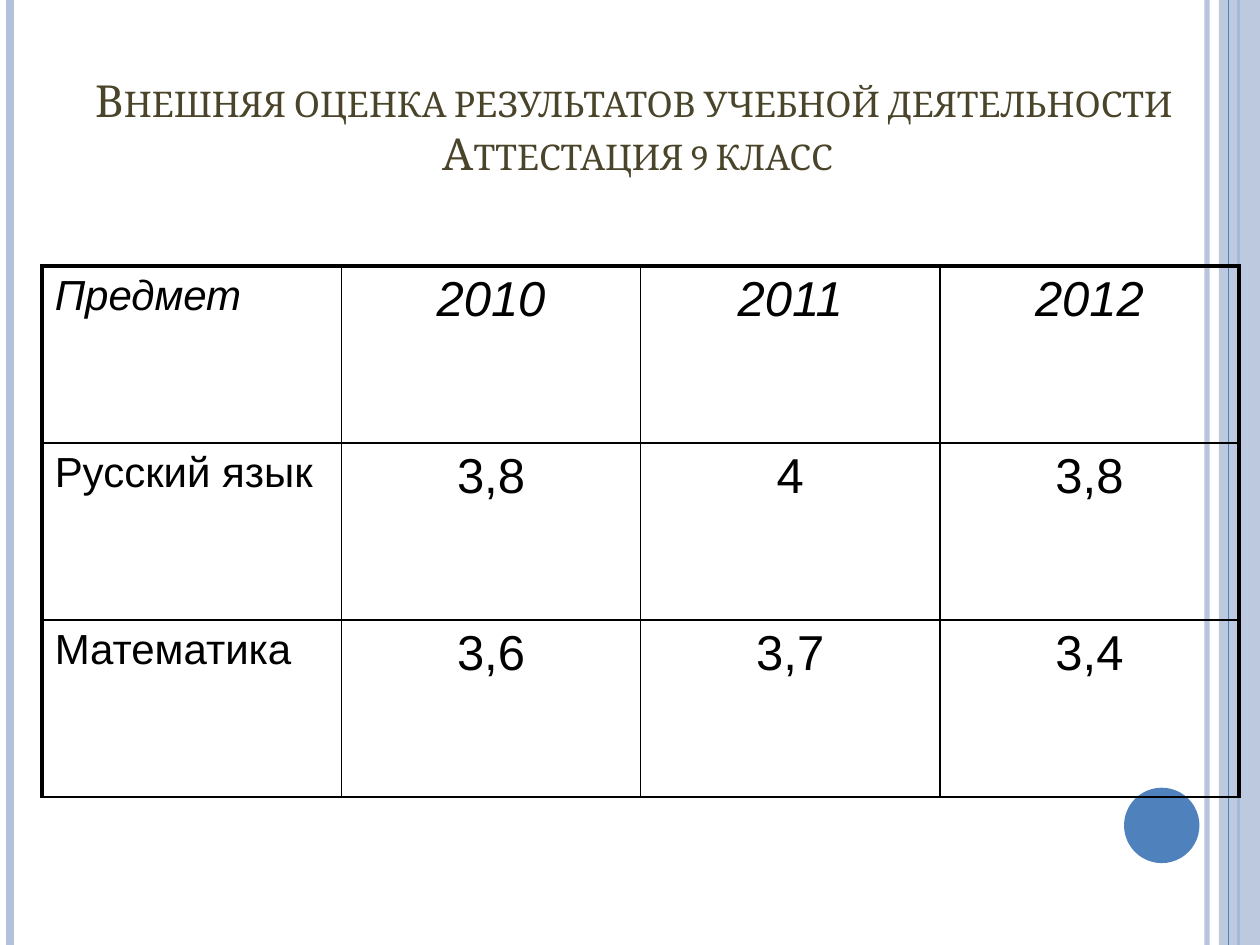
"""Builds a slide with a table of grade 9 external assessment results."""
from dataclasses import dataclass

from lxml.etree import SubElement
from pptx import Presentation
from pptx.dml.color import RGBColor
from pptx.enum.shapes import MSO_CONNECTOR as CONN, MSO_SHAPE as SHAPE
from pptx.enum.text import MSO_ANCHOR as ANCHOR, PP_ALIGN as ALIGN
from pptx.oxml.ns import qn
from pptx.util import Cm, Pt


@dataclass(frozen=True)
class Theme:
    pale: RGBColor = RGBColor(0xB3, 0xC1, 0xDB)
    accent: RGBColor = RGBColor(0x4F, 0x81, 0xBD)
    title: RGBColor = RGBColor(0x4A, 0x45, 0x2A)
    ink: RGBColor = RGBColor(0, 0, 0)
    title_font: str = "Cambria"
    body_font: str = "Arial"
    title_size: float = 25.2
    label_size: float = 24
    value_size: float = 28
    outer_border: float = 2.25
    inner_border: float = 1


def add_stripe(x, color, width, opacity=100):
    stripe = s.shapes.add_connector(CONN.STRAIGHT, Cm(x), 0, Cm(x), prs.slide_height)
    stripe.line.color.rgb = color
    stripe.line.width = Pt(width)
    sp_pr = stripe.element.spPr
    SubElement(sp_pr.find(".//" + qn("a:srgbClr")), qn("a:alpha"), val=str(opacity * 1000))
    SubElement(sp_pr, qn("a:effectLst"))


def add_plain_shape(kind, left, top, width, height, color, opacity=100):
    shape = s.shapes.add_shape(kind, Cm(left), Cm(top), Cm(width), Cm(height))
    shape.shadow.inherit = False
    shape.fill.solid()
    shape.fill.fore_color.rgb = color
    shape.line.fill.background()
    sp_pr = shape.element.spPr
    SubElement(sp_pr.find(".//" + qn("a:srgbClr")), qn("a:alpha"), val=str(opacity * 1000))


theme = Theme()
prs = Presentation()
prs.slide_width, prs.slide_height = Cm(25.4), Cm(19.05)
s = prs.slides.add_slide(prs.slide_layouts[5])

add_stripe(24.33, theme.pale, 3, opacity=93)
add_stripe(0.2, theme.pale, 4.5)
add_stripe(24.97, theme.accent, 1.5)
add_plain_shape(SHAPE.RECTANGLE, 24.57, 0, 0.83, 19.05, theme.pale, opacity=87)
add_stripe(24.77, theme.accent, 0.75)
add_plain_shape(SHAPE.OVAL, 22.66, 15.88, 1.52, 1.52, theme.accent)

title_lines = ["Внешняя оценка результатов учебной деятельности ", "Аттестация 9 класс"]
title = s.shapes.title
title.left, title.top, title.width, title.height = Cm(0.79), Cm(1.4), Cm(24.13), Cm(2.34)
title.element.getparent().append(title.element)
tf = title.text_frame
tf.word_wrap = True
tf.vertical_anchor = ANCHOR.BOTTOM
p = tf.paragraphs[0]
p.alignment = ALIGN.CENTER
for i, line in enumerate(title_lines):
    if i > 0:
        p.add_line_break()
    r = p.add_run()
    r.text = line
    r.font.name = theme.title_font
    r.font.size = Pt(theme.title_size)
    r.font.color.rgb = theme.title
    r._r.get_or_add_rPr().set("cap", "small")

results = [
    ["Предмет", "2010", "2011", "2012"],
    ["Русский язык", "3,8", "4", "3,8"],
    ["Математика", "3,6", "3,7", "3,4"],
]
n_rows, n_cols = len(results), len(results[0])
row_height = Cm(3.57)
frame = s.shapes.add_table(n_rows, n_cols, Cm(0.85), Cm(5.36), Cm(24.13), n_rows * row_height)
table = frame.table
table.first_row = table.horz_banding = False

for i, row in enumerate(results):
    table.rows[i].height = row_height
    for j, text in enumerate(row):
        is_header, is_label = i == 0, j == 0
        cell = table.cell(i, j)
        cell.fill.background()

        p = cell.text_frame.paragraphs[0]
        p.alignment = ALIGN.LEFT if is_label else ALIGN.CENTER
        space_before = SubElement(p._p.get_or_add_pPr(), qn("a:spcBef"))
        SubElement(space_before, qn("a:spcPct"), val="20000")
        r = p.add_run()
        r.text = text
        r.font.name = theme.body_font
        r.font.size = Pt(theme.label_size if is_label else theme.value_size)
        r.font.italic = is_header
        r.font.color.rgb = theme.ink

        tc_pr = cell._tc.get_or_add_tcPr()
        is_outer = {"lnL": is_label, "lnR": j == n_cols - 1, "lnT": is_header, "lnB": False}
        for position, (side, outer) in enumerate(is_outer.items()):
            width = theme.outer_border if outer else theme.inner_border
            border = SubElement(tc_pr, qn(f"a:{side}"), w=str(Pt(width)))
            border_fill = SubElement(border, qn("a:solidFill"))
            SubElement(border_fill, qn("a:srgbClr"), val=str(theme.ink))
            tc_pr.insert(position, border)

prs.save("out.pptx")
